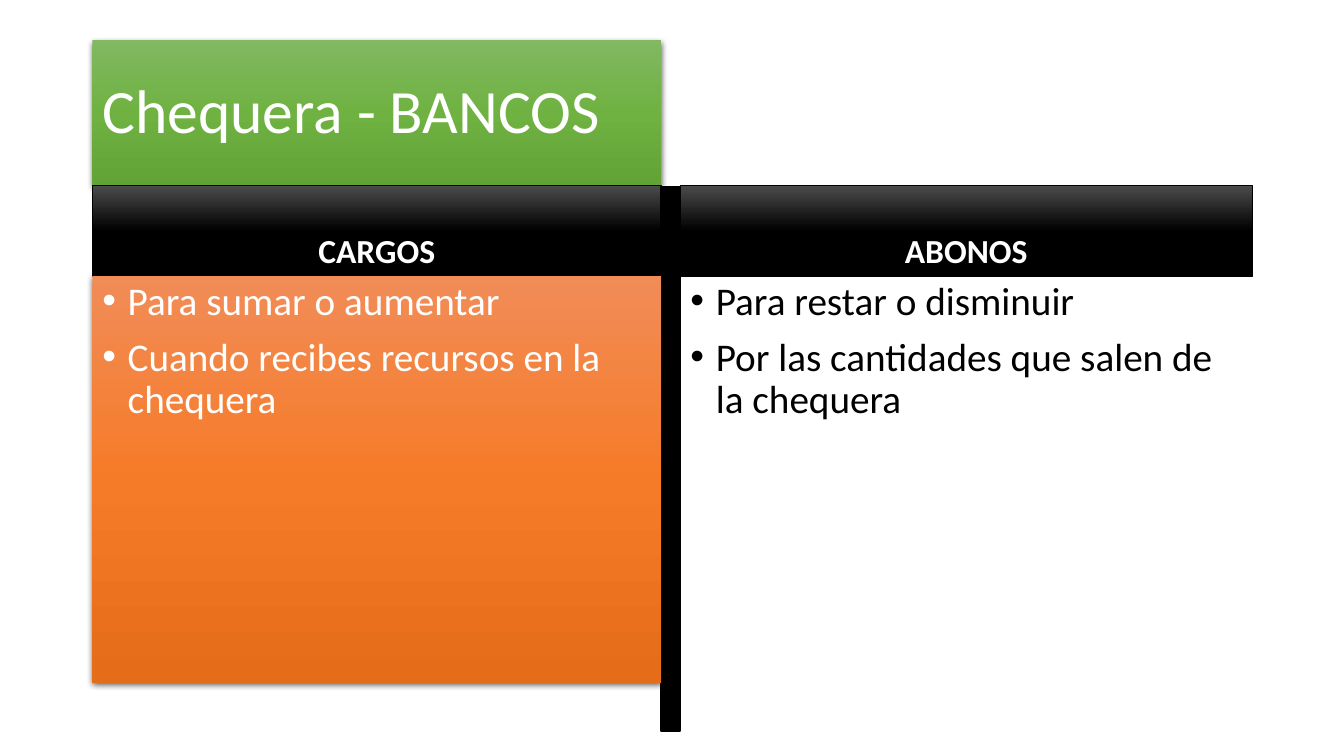
from copy import deepcopy
from dataclasses import dataclass

from pptx import Presentation
from pptx.dml.color import RGBColor
from pptx.enum import shapes, text
from pptx.oxml import ns, parse_xml
from pptx.util import Cm, Pt


@dataclass(frozen=True)
class Theme:
    font: str = "Calibri"
    white: str = "FFFFFF"
    black: str = "000000"
    green: tuple = ("81B861", "6FB242", "62A336")
    dark: tuple = ("4B4B4B", "000000", "000000")
    orange: tuple = ("F18C57", "F67B28", "E56C19")
    title: int = 44
    head: int = 24
    body: int = 28


THEME = Theme()
TOP, HEAD, BODY = 1.02, 4.68, 6.96
TALL = 10.24
LEFT, LEFT_W = 2.33, 14.33
RIGHT, RIGHT_W = 17.15, 14.4


def rgb(code):
    return RGBColor.from_string(code)


def add_rect(slide, box, line=None):
    rect = slide.shapes.add_shape(shapes.MSO_SHAPE.RECTANGLE, *map(Cm, box))
    rect.shadow.inherit = False
    if line:
        rect.line.color.rgb = rgb(THEME.black)
        rect.line.width = Pt(line)
    else:
        rect.line.fill.background()
    return rect


def shade(rect, tones):
    """Fill from top to bottom with three evenly spaced tones."""
    rect.fill.gradient()
    rect.fill.gradient_angle = 270
    stops = rect._element.spPr.find(".//" + ns.qn("a:gsLst"))
    stops.insert(1, deepcopy(stops[0]))
    for i, (stop, tone) in enumerate(zip(rect.fill.gradient_stops, tones)):
        stop.position = i / 2
        stop.color.rgb = rgb(tone)


def cast_shadow(rect):
    effects = rect._element.spPr.find(ns.qn("a:effectLst"))
    effects.append(parse_xml(
        f'<a:outerShdw {ns.nsdecls("a")} blurRad="{Pt(4.5)}" dist="{Pt(1.5)}" '
        'dir="5400000" algn="ctr" rotWithShape="0">'
        f'<a:srgbClr val="{THEME.black}"><a:alpha val="63000"/></a:srgbClr>'
        '</a:outerShdw>'))


def add_bullet(para):
    props = para._p.get_or_add_pPr()
    props.set("marL", str(Cm(0.64)))
    props.set("indent", str(-Cm(0.64)))
    for xml in ('<a:buFont {} typeface="Arial"/>', '<a:buChar {} char="•"/>'):
        props.append(parse_xml(xml.format(ns.nsdecls("a"))))


def write(shape, lines, size, color, anchor, align=text.PP_ALIGN.LEFT,
          bold=False, gap=10, bullet=False):
    frame = shape.text_frame
    frame.word_wrap = True
    frame.vertical_anchor = anchor
    frame.text = "\n".join(lines)
    for para in frame.paragraphs:
        para.alignment = align
        para.line_spacing = 0.9
        para.space_before = Pt(gap)
        if bullet:
            add_bullet(para)
        for run in para.runs:
            run.font.name = THEME.font
            run.font.size = Pt(size)
            run.font.bold = bold
            run.font.color.rgb = rgb(color)


def add_title(slide, words):
    rect = add_rect(slide, (LEFT, TOP, LEFT_W, HEAD - TOP))
    shade(rect, THEME.green)
    cast_shadow(rect)
    write(rect, [words], THEME.title, THEME.white,
          text.MSO_ANCHOR.MIDDLE, gap=0)


def add_head(slide, left, width, words):
    rect = add_rect(slide, (left, HEAD, width, BODY - HEAD), line=0.5)
    shade(rect, THEME.dark)
    write(rect, [words], THEME.head, THEME.white, text.MSO_ANCHOR.BOTTOM,
          align=text.PP_ALIGN.CENTER, bold=True)


def add_bar(slide):
    bar = add_rect(slide, (LEFT + LEFT_W, 4.7, 0.48, 13.72), line=1)
    bar.fill.solid()
    bar.fill.fore_color.rgb = rgb(THEME.black)


def add_list(slide, left, width, lines, tones=None):
    box = (left, BODY, width, TALL)
    if tones:
        shape = add_rect(slide, box)
        shade(shape, tones)
        cast_shadow(shape)
    else:
        shape = slide.shapes.add_textbox(*map(Cm, box))
    write(shape, lines, THEME.body, THEME.white if tones else THEME.black,
          text.MSO_ANCHOR.TOP, bullet=True)


def main():
    deck = Presentation()
    deck.slide_width, deck.slide_height = Cm(33.87), Cm(19.05)
    slide = deck.slides.add_slide(deck.slide_layouts[6])

    add_title(slide, "Chequera - BANCOS")
    add_head(slide, LEFT, LEFT_W, "CARGOS")
    add_head(slide, RIGHT, RIGHT_W, "ABONOS")
    add_bar(slide)
    add_list(slide, LEFT, LEFT_W,
             ["Para sumar o aumentar",
              "Cuando recibes recursos en la chequera"], THEME.orange)
    add_list(slide, RIGHT, RIGHT_W,
             ["Para restar o disminuir",
              "Por las cantidades que salen de la chequera"])
    deck.save("out.pptx")


if __name__ == "__main__":
    main()
